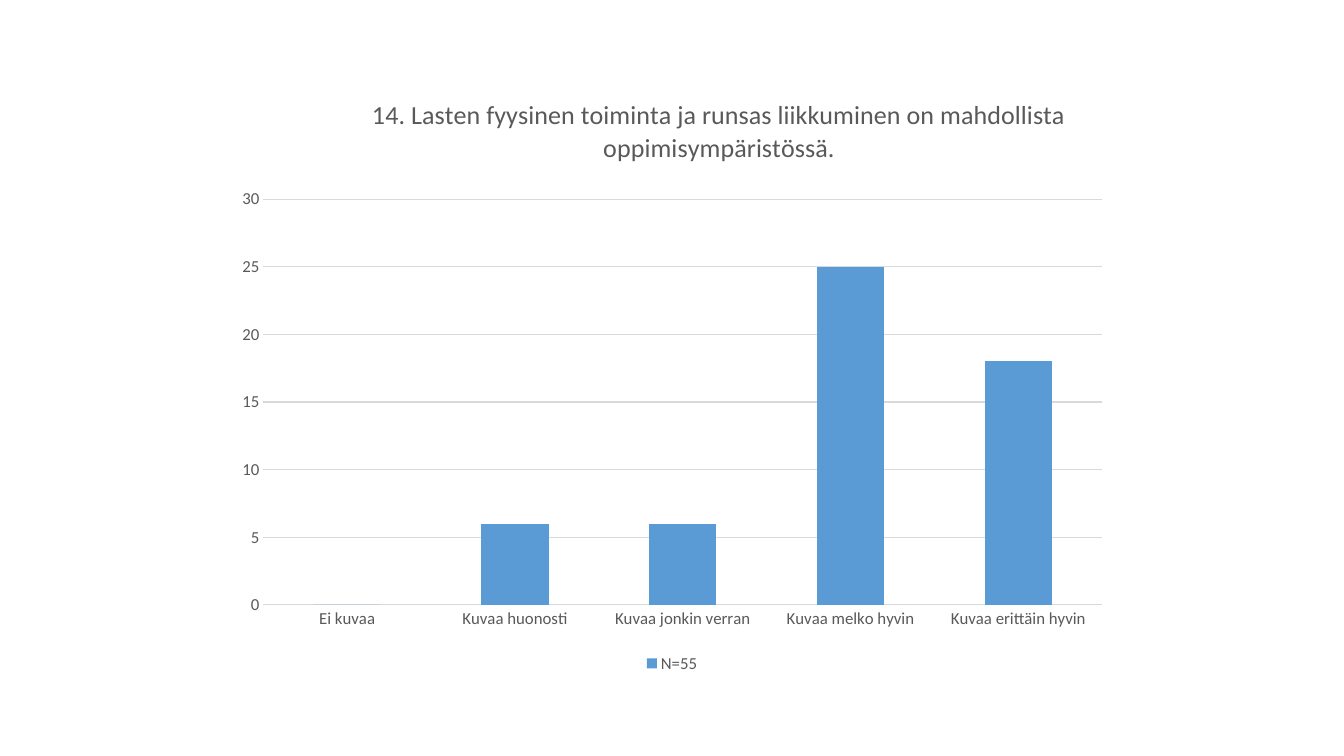
from lxml import etree
from pptx import Presentation
from pptx.chart.data import CategoryChartData
from pptx.dml.color import RGBColor
from pptx.enum.chart import XL_CHART_TYPE, XL_LEGEND_POSITION, XL_TICK_MARK
from pptx.oxml.ns import qn
from pptx.util import Inches, Pt

STACKED = XL_CHART_TYPE.COLUMN_STACKED
BOTTOM = XL_LEGEND_POSITION.BOTTOM
NO_TICK = XL_TICK_MARK.NONE

BLUE = RGBColor(0x5B, 0x9B, 0xD5)
GREY = RGBColor(0x59, 0x59, 0x59)
LIGHT = RGBColor(0xD9, 0xD9, 0xD9)

TITLE = "14. Lasten fyysinen toiminta ja runsas liikkuminen on mahdollista oppimisympäristössä."
ANSWERS = {
    "Ei kuvaa": 0,
    "Kuvaa huonosti": 6,
    "Kuvaa jonkin verran": 6,
    "Kuvaa melko hyvin": 25,
    "Kuvaa erittäin hyvin": 18,
}


class SlideBuilder:
    font_name = "Calibri"

    def __init__(self, prs):
        self.s = prs.slides.add_slide(prs.slide_layouts[6])

    def set_font(self, font, size):
        font.name = self.font_name
        font.size = Pt(size)
        font.bold = False
        font.color.rgb = GREY

    def set_line(self, fmt):
        fmt.line.color.rgb = LIGHT
        fmt.line.width = Pt(0.75)

    def place(self, parent, index, **values):
        for old in parent.findall(qn("c:layout")):
            parent.remove(old)
        layout = etree.Element(qn("c:layout"))
        manual = etree.SubElement(layout, qn("c:manualLayout"))
        for name, value in values.items():
            etree.SubElement(manual, qn("c:" + name)).set("val", str(value))
        parent.insert(index, layout)

    def add_chart(self, left, top, width, height, title, name, answers):
        data = CategoryChartData()
        data.categories = list(answers)
        data.add_series(name, list(answers.values()))
        chart = self.s.shapes.add_chart(
            STACKED, Inches(left), Inches(top), Inches(width), Inches(height), data
        ).chart
        self.set_font(chart.font, 12)
        self.add_title(chart, title)
        self.format_axes(chart)
        self.format_plot(chart)
        chart.has_legend = True
        chart.legend.position = BOTTOM
        chart.legend.include_in_layout = False
        self.set_font(chart.legend.font, 12)

    def add_title(self, chart, text):
        tf = chart.chart_title.text_frame
        tf.text = text
        self.set_font(tf.paragraphs[0].font, 18.6)
        chart.chart_title.include_in_layout = False
        self.place(chart.chart_title._element, 1,
                   xMode="edge", yMode="edge", x=0.16, y=0.02)

    def format_axes(self, chart):
        for axis in (chart.category_axis, chart.value_axis):
            axis.major_tick_mark = axis.minor_tick_mark = NO_TICK
            self.set_font(axis.tick_labels.font, 12)
        self.set_line(chart.category_axis.format)
        values = chart.value_axis
        values.minimum_scale, values.maximum_scale, values.major_unit = 0, 30, 5
        values.format.line.fill.background()
        values.has_major_gridlines = True
        self.set_line(values.major_gridlines.format)

    def format_plot(self, chart):
        plot = chart.plots[0]
        plot.gap_width = 150
        plot.overlap = 100
        plot.vary_by_categories = False
        fill = plot.series[0].format.fill
        fill.solid()
        fill.fore_color.rgb = BLUE
        self.place(chart._chartSpace.chart.plotArea, 0, layoutTarget="inner",
                   xMode="edge", yMode="edge", x=0.044, y=0.2, w=0.936, h=0.679)


def main():
    prs = Presentation()
    prs.slide_width = Inches(13.33)
    prs.slide_height = Inches(7.5)
    SlideBuilder(prs).add_chart(2.22, 0.79, 8.89, 5.93, TITLE, "N=55", ANSWERS)
    prs.save("out.pptx")


if __name__ == "__main__":
    main()
